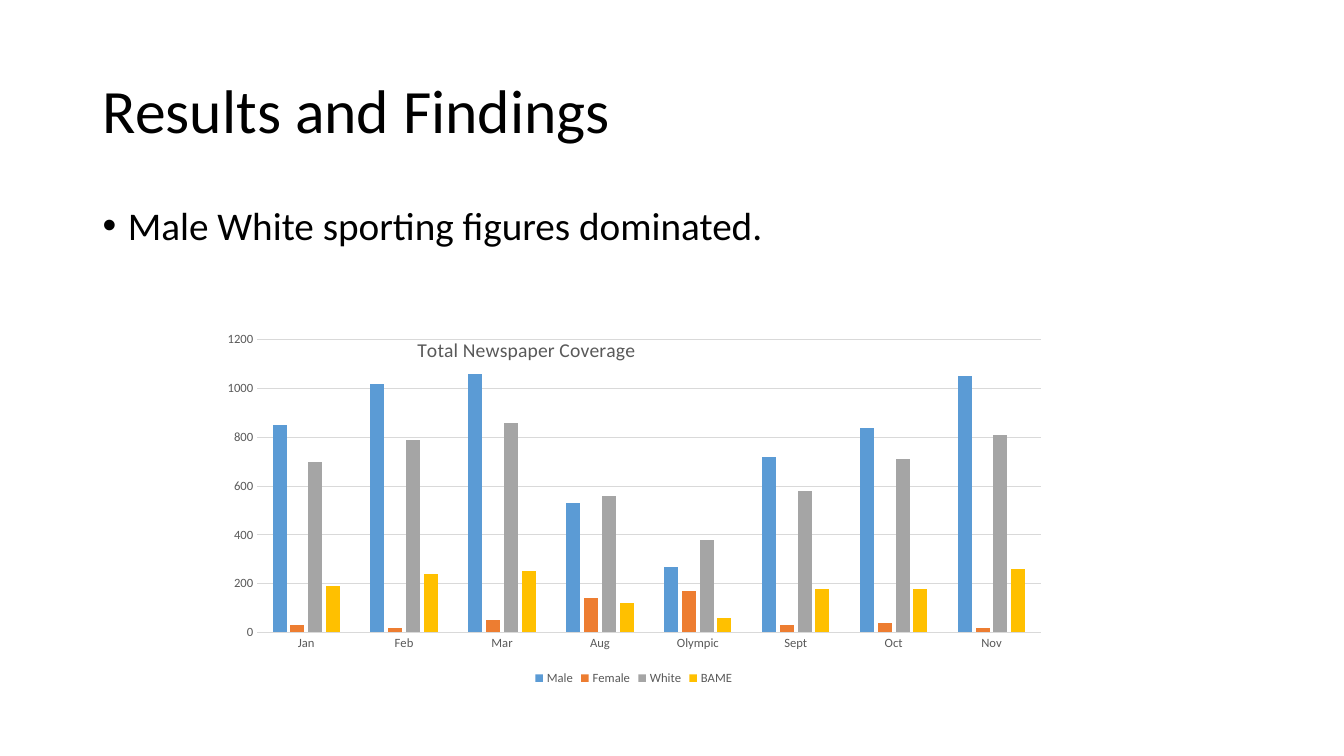
"""Build the Results and Findings slide with its newspaper coverage chart."""
from dataclasses import dataclass

from lxml import etree
from pptx import Presentation
from pptx.chart.data import CategoryChartData
from pptx.dml.color import RGBColor
from pptx.enum import chart as charts, text
from pptx.oxml import ns
from pptx.util import Inches, Pt

TITLE = "Results and Findings"
FINDING = "Male White sporting figures dominated."
CHART_TITLE = "Total Newspaper Coverage"
MONTHS = ["Jan", "Feb", "Mar", "Aug", "Olympic", "Sept", "Oct", "Nov"]
COVERAGE = {
    "Male": (850, 1020, 1060, 530, 270, 720, 840, 1050),
    "Female": (30, 20, 50, 140, 170, 30, 40, 20),
    "White": (700, 790, 860, 560, 380, 580, 710, 810),
    "BAME": (190, 240, 250, 120, 60, 180, 180, 260),
}
TITLE_BOX = (0.92, 0.4, 11.5, 1.45)
BODY_BOX = (0.92, 2, 11.5, 4.76)
CHART_BOX = (2.09, 2.72, 8.39, 4.12)
TITLE_SPOT = {"x": 0.24, "y": 0.14}
PLOT_SPOT = {"x": 0.055, "y": 0.158, "w": 0.926, "h": 0.705}


@dataclass(frozen=True)
class Theme:
    font: str = "Calibri"
    ink: str = "000000"
    muted: str = "595959"
    grid: str = "D9D9D9"
    series: tuple = ("5B9BD5", "ED7D31", "A5A5A5", "FFC000")
    title: int = 44
    body: int = 28
    heading: int = 14
    label: int = 9


THEME = Theme()


def style_font(font, size, color):
    font.name, font.size, font.bold = THEME.font, Pt(size), False
    font.color.rgb = RGBColor.from_string(color)


def style_line(line):
    line.color.rgb = RGBColor.from_string(THEME.grid)
    line.width = Pt(0.75)


def write(para, words, size, color):
    span = para.add_run()
    span.text = words
    style_font(span.font, size, color)


def add_bullet(para):
    properties = para._p.get_or_add_pPr()
    properties.set("marL", str(Inches(0.25)))
    properties.set("indent", str(-Inches(0.25)))
    etree.SubElement(properties, ns.qn("a:buFont")).set("typeface", "Arial")
    etree.SubElement(properties, ns.qn("a:buChar")).set("char", "•")


def place(element, index, spot):
    for old in element.findall(ns.qn("c:layout")):
        element.remove(old)
    layout = etree.Element(ns.qn("c:layout"))
    element.insert(index, layout)
    manual = etree.SubElement(layout, ns.qn("c:manualLayout"))
    settings = {"xMode": "edge", "yMode": "edge", **spot}
    if "w" in spot:
        settings = {"layoutTarget": "inner", **settings}
    for name, value in settings.items():
        etree.SubElement(manual, ns.qn(f"c:{name}")).set("val", str(value))


def add_title(page):
    box = page.shapes.title
    box.left, box.top, box.width, box.height = map(Inches, TITLE_BOX)
    frame = box.text_frame
    frame.auto_size = text.MSO_AUTO_SIZE.NONE
    frame.vertical_anchor = text.MSO_ANCHOR.MIDDLE
    para = frame.paragraphs[0]
    para.alignment, para.line_spacing = text.PP_ALIGN.LEFT, 0.9
    write(para, TITLE, THEME.title, THEME.ink)


def add_finding(page):
    frame = page.shapes.add_textbox(*map(Inches, BODY_BOX)).text_frame
    frame.word_wrap = True
    para = frame.paragraphs[0]
    para.line_spacing, para.space_before = 0.9, Pt(10)
    add_bullet(para)
    write(para, FINDING, THEME.body, THEME.ink)


def add_coverage(page):
    data = CategoryChartData()
    data.categories = MONTHS
    for name, values in COVERAGE.items():
        data.add_series(name, values)
    chart = page.shapes.add_chart(
        charts.XL_CHART_TYPE.COLUMN_CLUSTERED, *map(Inches, CHART_BOX), data).chart
    style_font(chart.font, THEME.label, THEME.muted)

    title = chart.chart_title
    write(title.text_frame.paragraphs[0], CHART_TITLE, THEME.heading, THEME.muted)
    place(title._element, 1, TITLE_SPOT)
    title._element.find(ns.qn("c:overlay")).set("val", "1")
    place(chart._chartSpace.chart.plotArea, 0, PLOT_SPOT)

    plot = chart.plots[0]
    plot.gap_width, plot.overlap, plot.vary_by_categories = 219, -27, False
    for series, color in zip(plot.series, THEME.series):
        series.format.fill.solid()
        series.format.fill.fore_color.rgb = RGBColor.from_string(color)

    for axis in (chart.category_axis, chart.value_axis):
        axis.major_tick_mark = axis.minor_tick_mark = charts.XL_TICK_MARK.NONE
        style_font(axis.tick_labels.font, THEME.label, THEME.muted)
    style_line(chart.category_axis.format.line)
    scale = chart.value_axis
    scale.minimum_scale, scale.maximum_scale, scale.major_unit = 0, 1200, 200
    scale.format.line.fill.background()
    style_line(scale.major_gridlines.format.line)

    chart.has_legend = True
    chart.legend.position = charts.XL_LEGEND_POSITION.BOTTOM
    chart.legend.include_in_layout = False
    style_font(chart.legend.font, THEME.label, THEME.muted)


def main():
    deck = Presentation()
    deck.slide_width, deck.slide_height = Inches(13.33), Inches(7.5)
    page = deck.slides.add_slide(deck.slide_layouts[5])
    add_title(page)
    add_finding(page)
    add_coverage(page)
    deck.save("out.pptx")


if __name__ == "__main__":
    main()
